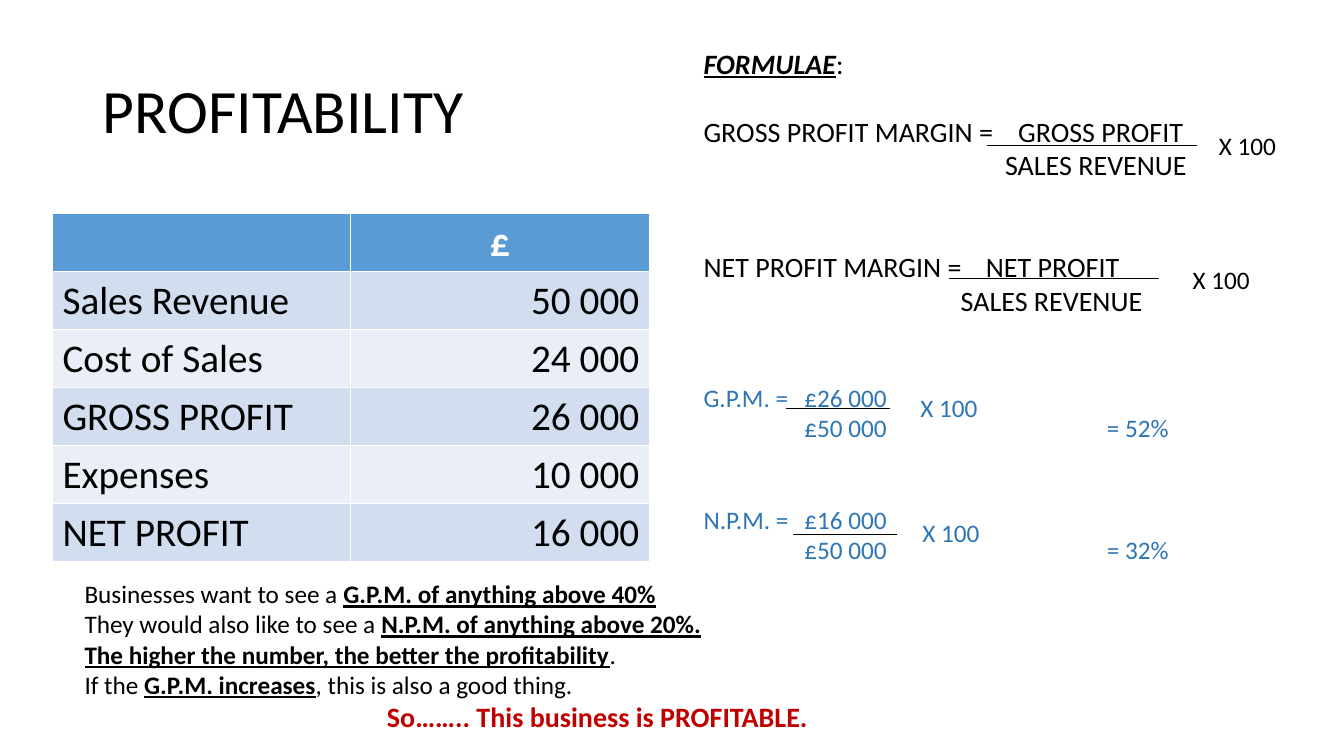
from dataclasses import dataclass

from lxml.etree import SubElement
from pptx import Presentation
from pptx.dml.color import RGBColor
from pptx.enum.shapes import MSO_CONNECTOR
from pptx.enum.text import MSO_ANCHOR, MSO_AUTO_SIZE, PP_ALIGN
from pptx.oxml.ns import qn
from pptx.slide import Slide
from pptx.text.text import TextFrame
from pptx.util import Inches, Pt


@dataclass(frozen=True)
class Theme:
    font: str = "Calibri"
    black: str = "000000"
    white: str = "FFFFFF"
    blue: str = "2E75B6"
    red: str = "C00000"
    head: str = "5B9BD5"
    bands: tuple[str, str] = ("D2DEEF", "EAEFF7")
    title: int = 44
    cell: int = 28
    large: int = 20
    small: int = 18


THEME = Theme()


@dataclass(frozen=True)
class Bit:
    text: str
    strong: bool = False
    under: bool = False
    slant: bool = False
    tint: str | None = None
    size: int | None = None


@dataclass(frozen=True)
class Line:
    bits: tuple[Bit, ...]
    gap: float = 0
    tabs: tuple[float, ...] = ()


@dataclass(frozen=True)
class Box:
    left: float
    top: float
    width: float
    height: float
    lines: tuple[Line, ...]
    size: int = THEME.small
    tint: str = THEME.black


@dataclass(frozen=True)
class Rule:
    left: float
    top: float
    width: float


def plain(text: str, gap: float = 0, tabs: tuple[float, ...] = ()) -> Line:
    return Line((Bit(text),), gap, tabs)


def key(text: str) -> Bit:
    return Bit(text, strong=True, under=True)


def write(frame: TextFrame, lines: tuple[Line, ...], *, size: int,
          tint: str = THEME.black, align: PP_ALIGN = PP_ALIGN.LEFT,
          bold: bool = False, pitch: float = 1.0) -> None:
    for index, line in enumerate(lines):
        para = frame.add_paragraph() if index else frame.paragraphs[0]
        para.alignment = align
        para.line_spacing = pitch
        para.space_before = Pt(line.gap)
        if line.tabs:
            stops = SubElement(para._p.get_or_add_pPr(), qn("a:tabLst"))
            for stop in line.tabs:
                SubElement(stops, qn("a:tab"), pos=str(Inches(stop)), algn="l")
        for bit in line.bits:
            run = para.add_run()
            run.text = bit.text
            font = run.font
            font.name = THEME.font
            font.size = Pt(bit.size or size)
            font.bold = bold or bit.strong
            font.italic = bit.slant
            font.underline = bit.under
            font.color.rgb = RGBColor.from_string(bit.tint or tint)


def draw_box(slide: Slide, box: Box) -> None:
    shape = slide.shapes.add_textbox(Inches(box.left), Inches(box.top),
                                     Inches(box.width), Inches(box.height))
    shape.text_frame.word_wrap = True
    write(shape.text_frame, box.lines, size=box.size, tint=box.tint)


def draw_rule(slide: Slide, rule: Rule) -> None:
    top = Inches(rule.top)
    line = slide.shapes.add_connector(
        MSO_CONNECTOR.STRAIGHT, Inches(rule.left), top,
        Inches(rule.left + rule.width), top)
    line.line.color.rgb = RGBColor.from_string(THEME.black)
    line.line.width = Pt(0.5)
    SubElement(line._element.spPr, qn("a:effectLst"))


def draw_title(slide: Slide, text: str) -> None:
    title = slide.shapes.title
    title.left, title.top = Inches(0.92), Inches(0.4)
    title.width, title.height = Inches(11.5), Inches(1.45)
    frame = title.text_frame
    frame.auto_size = MSO_AUTO_SIZE.NONE
    frame.vertical_anchor = MSO_ANCHOR.MIDDLE
    write(frame, (plain(text),), size=THEME.title, pitch=0.9)


def draw_table(slide: Slide, rows: tuple[tuple[str, str], ...]) -> None:
    pitch = 0.57
    table = slide.shapes.add_table(
        len(rows), 2, Inches(0.52), Inches(2.12),
        Inches(5.92), Inches(pitch * len(rows))).table
    for y, row in enumerate(rows):
        table.rows[y].height = Inches(pitch)
        head = y == 0
        shade = THEME.head if head else THEME.bands[(y - 1) % 2]
        for x, text in enumerate(row):
            cell = table.cell(y, x)
            cell.fill.solid()
            cell.fill.fore_color.rgb = RGBColor.from_string(shade)
            side = PP_ALIGN.RIGHT if x else PP_ALIGN.LEFT
            write(cell.text_frame, (plain(text),), size=THEME.cell, bold=head,
                  tint=THEME.white if head else THEME.black,
                  align=PP_ALIGN.CENTER if head else side)


ROWS = (
    ("", "£"),
    ("Sales Revenue", "50 000"),
    ("Cost of Sales", "24 000"),
    ("GROSS PROFIT", "26 000"),
    ("Expenses", "10 000"),
    ("NET PROFIT", "16 000"),
)

SUMS = (1.0, 4.0)
TIMES = (plain("X 100"),)

BOXES = (
    Box(6.88, 0.41, 6, 3.8, (
        Line((Bit("FORMULAE", strong=True, under=True, slant=True), Bit(":"))),
        plain("GROSS PROFIT MARGIN =\tGROSS PROFIT", 24.4, (3.12,)),
        plain("\tSALES REVENUE", tabs=(2.99,)),
        plain("NET PROFIT MARGIN =\tNET PROFIT", 48.8, (2.8,)),
        plain("\tSALES REVENUE", tabs=(2.55,)),
    ), size=THEME.large),
    Box(11.99, 1.24, 0.85, 0.4, TIMES),
    Box(11.73, 2.57, 0.85, 0.4, TIMES),
    Box(6.88, 3.74, 6, 3.13, (
        plain("G.P.M. =\t£26 000", tabs=SUMS),
        plain("\t£50 000\t= 52%", tabs=SUMS),
        plain("N.P.M. =\t£16 000", 44, SUMS),
        plain("\t£50 000\t= 32%", tabs=SUMS),
    ), tint=THEME.blue),
    Box(9.03, 3.84, 0.85, 0.4, TIMES, tint=THEME.blue),
    Box(9.05, 5.08, 0.85, 0.4, TIMES, tint=THEME.blue),
    Box(0.74, 5.69, 12.26, 1.65, (
        Line((Bit("Businesses want to see a "),
              key("G.P.M. of anything above 40%"))),
        Line((Bit("They would also like to see a "),
              key("N.P.M. of anything above 20%."))),
        Line((key("The higher the number, the better the profitability"),
              Bit("."))),
        Line((Bit("If the "), key("G.P.M. increases"),
              Bit(", this is also a good thing."))),
        Line((Bit("\tSo…….. This business is PROFITABLE.", strong=True,
                  tint=THEME.red, size=THEME.large),), tabs=(3.0,)),
    )),
)

RULES = (
    Rule(9.79, 1.44, 2.08),
    Rule(9.41, 2.76, 2.09),
    Rule(7.8, 4.05, 1.03),
    Rule(7.87, 5.3, 1.03),
)


def main() -> None:
    deck = Presentation()
    deck.slide_width, deck.slide_height = Inches(13.33), Inches(7.5)
    slide = deck.slides.add_slide(deck.slide_layouts[5])
    draw_title(slide, "PROFITABILITY")
    draw_table(slide, ROWS)
    for box in BOXES:
        draw_box(slide, box)
    for rule in RULES:
        draw_rule(slide, rule)
    deck.save("out.pptx")


if __name__ == "__main__":
    main()
